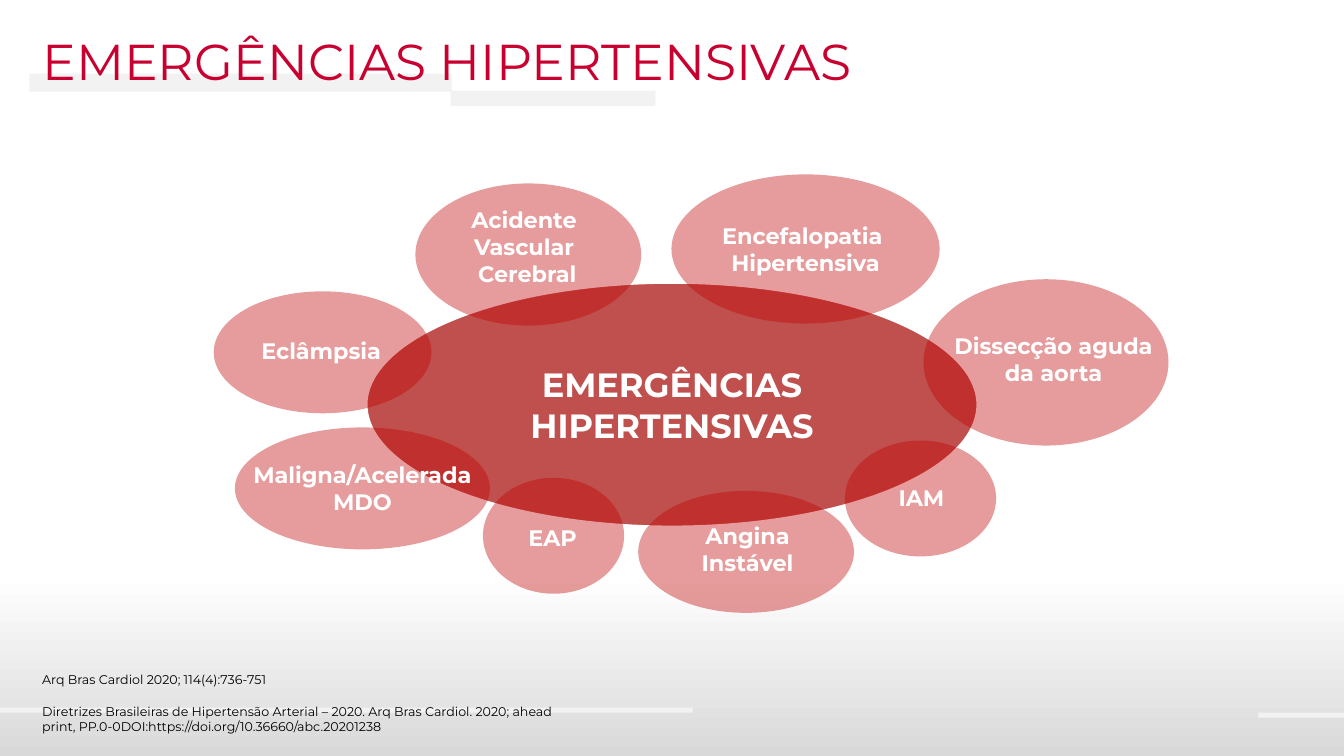
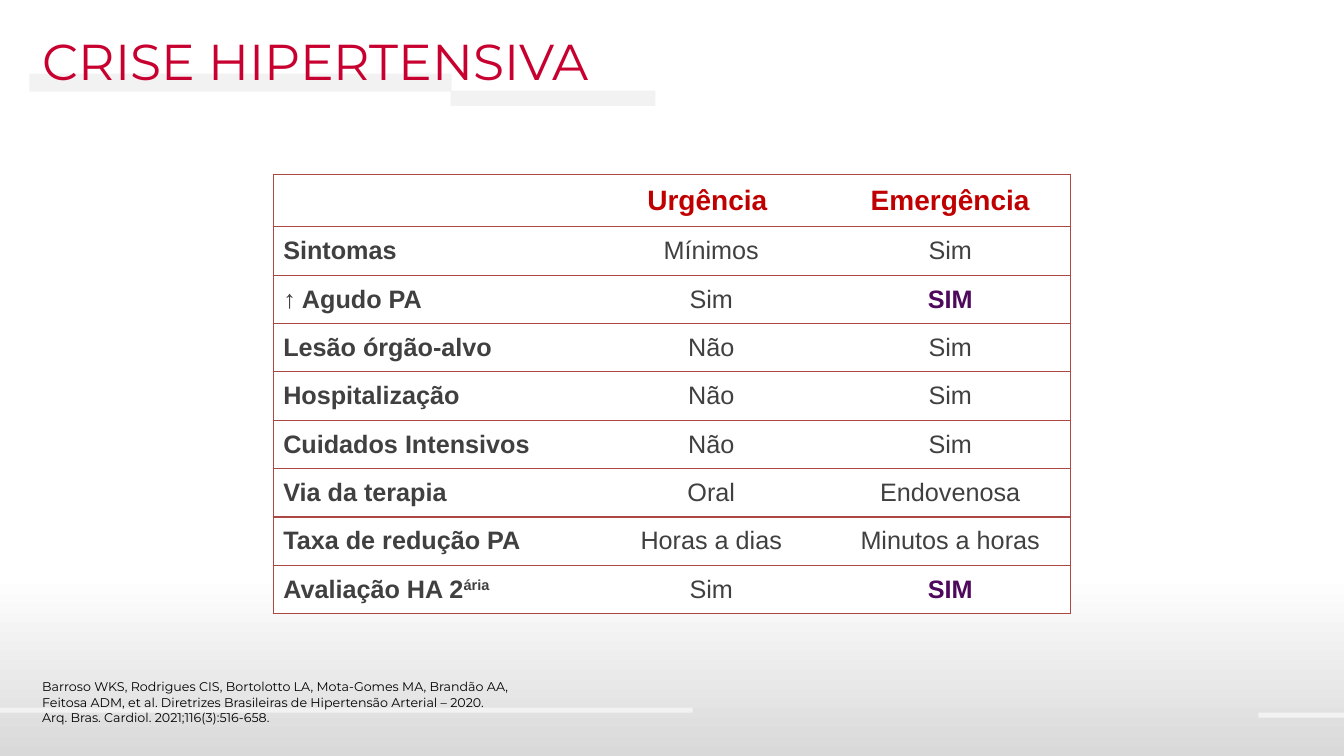
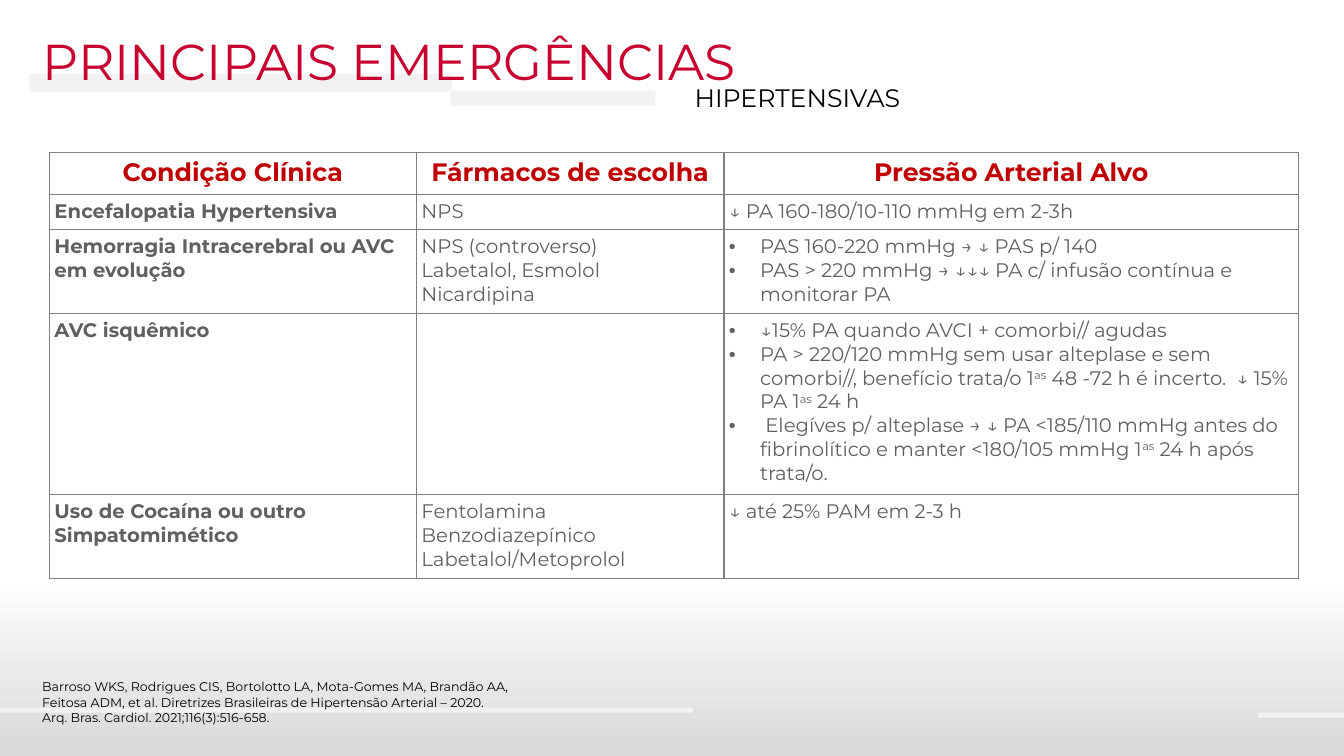
"""Build three slides on hypertensive emergencies."""
import lxml.etree
import pptx
import pptx.dml.color
import pptx.enum.shapes
import pptx.enum.text
import pptx.oxml.ns
import pptx.util

RGB = pptx.dml.color.RGBColor
WHITE = RGB(0xFF, 0xFF, 0xFF)
BLACK = RGB(0, 0, 0)
PALE = RGB(0xF2, 0xF2, 0xF2)
SHADE = RGB(0xD9, 0xD9, 0xD9)
TITLE = RGB(0xC8, 0x00, 0x30)
CORE = RGB(0xC0, 0x50, 0x4D)
RED = RGB(0xC0, 0, 0)
BRICK = RGB(0xAC, 0x47, 0x44)
DARK = RGB(0x40, 0x40, 0x40)
PLUM = RGB(0x4E, 0x08, 0x5C)
GRAY = RGB(0x80, 0x80, 0x80)
TEXT = RGB(0x60, 0x60, 0x60)

ALIGN = pptx.enum.text.PP_ALIGN
ANCHOR = pptx.enum.text.MSO_ANCHOR
SHAPE = pptx.enum.shapes.MSO_SHAPE
Inches = pptx.util.Inches
qn = pptx.oxml.ns.qn

WIDE, HIGH = 13.33, 7.5
BANDS = [
    (0.29, 0.73, 4.19, 0.18),
    (4.47, 0.9, 2.03, 0.15),
    (-0.02, 7.02, 6.89, 0.05),
    (12.48, 7.07, 0.85, 0.05),
]

HUB = (["EMERGÊNCIAS", "HIPERTENSIVAS"], (3.63, 2.8, 6.07, 2.43))
CAUSES = [
    (["Eclâmpsia"], (2.12, 2.89, 2.16, 1.21), (2.49, 3.3, 1.39, 0.37)),
    (["Angina Instável"], (6.33, 4.87, 2.14, 1.21), (6.45, 5.13, 1.93, 0.64)),
    (["Dissecção aguda da aorta"], (9.16, 2.77, 2.43, 1.65), (9.32, 3.25, 2.26, 0.64)),
    (["Acidente ", "Vascular ", "Cerebral"], (4.12, 1.82, 2.24, 1.41), (3.81, 2, 2.84, 0.91)),
    (["EAP"], (4.79, 4.74, 1.4, 1.15), (5.14, 5.15, 0.68, 0.37)),
    (["IAM"], (8.38, 4.37, 1.5, 1.15), (8.81, 4.75, 0.66, 0.37)),
    (["Encefalopatia ", "Hipertensiva"], (6.66, 1.73, 2.66, 1.48), None),
    (["Maligna/Acelerada", "MDO"], (2.33, 4.24, 2.53, 1.21), None),
]

CRISIS = [
    ("", "Urgência ", "Emergência"),
    ("Sintomas", "Mínimos", "Sim"),
    ("↑ Agudo PA", "Sim", "SIM"),
    ("Lesão órgão-alvo", "Não", "Sim"),
    ("Hospitalização", "Não", "Sim"),
    ("Cuidados Intensivos", "Não", "Sim"),
    ("Via da terapia", "Oral", "Endovenosa"),
    ("Taxa de redução PA", "Horas a dias", "Minutos a horas"),
    ("Avaliação HA 2^ária^", "Sim", "SIM"),
]

DRUGS = [
    ("Condição Clínica", "Fármacos de escolha", "Pressão Arterial Alvo"),
    ("Encefalopatia Hypertensiva", "NPS", "↓ PA 160-180/10-110 mmHg em 2-3h"),
    (
        "Hemorragia Intracerebral ou AVC em evolução",
        ["NPS (controverso)", "Labetalol, Esmolol", "Nicardipina"],
        [
            "•PAS 160-220 mmHg → ↓ PAS p/ 140",
            "•PAS > 220 mmHg → ↓↓↓ PA c/ infusão contínua e monitorar PA",
        ],
    ),
    (
        "AVC isquêmico",
        "",
        [
            "•↓15% PA quando AVCI + comorbi// agudas",
            "•PA > 220/120 mmHg sem usar alteplase e sem comorbi//, benefício "
            "trata/o 1^as^ 48 -72 h é incerto.  ↓ 15% PA 1^as^ 24 h",
            "• Elegíves p/ alteplase → ↓ PA <185/110 mmHg antes do fibrinolítico "
            "e manter <180/105 mmHg 1^as^ 24 h após trata/o.",
        ],
    ),
    (
        "Uso de Cocaína ou outro Simpatomimético",
        ["Fentolamina", "Benzodiazepínico", "Labetalol/Metoprolol"],
        "↓ até 25% PAM em 2-3 h",
    ),
]

JOURNAL = ["Arq Bras Cardiol 2020; 114(4):736-751"]
GUIDE = [
    "Diretrizes Brasileiras de Hipertensão Arterial – 2020. Arq Bras Cardiol. 2020; "
    "ahead print, PP.0-0DOI:https://doi.org/10.36660/abc.20201238"
]
SOURCE = [
    "Barroso WKS, Rodrigues CIS, Bortolotto LA, Mota-Gomes MA, Brandão AA,",
    "Feitosa ADM, et al. Diretrizes Brasileiras de Hipertensão Arterial – 2020.",
    "Arq. Bras. Cardiol. 2021;116(3):516-658.",
]


def write(frame, lines, size=9, color=BLACK, bold=False, align=ALIGN.LEFT,
          font="Montserrat", space=None):
    """Fill a text frame; ^marks^ raise text and a leading • makes a bullet."""
    for row, line in enumerate([lines] if isinstance(lines, str) else lines):
        para = frame.add_paragraph() if row else frame.paragraphs[0]
        para.alignment = align
        if space:
            para.line_spacing = space
        if line.startswith("•"):
            line = line[1:]
            props = para._p.get_or_add_pPr()
            props.set("marL", str(Inches(0.31)))
            props.set("indent", str(Inches(-0.31)))
            lxml.etree.SubElement(props, qn("a:buFont"), typeface="Arial")
            lxml.etree.SubElement(props, qn("a:buChar"), char="•")
        for part, words in enumerate(line.split("^")):
            if not words:
                continue
            run = para.add_run()
            run.text = words
            run.font.size = pptx.util.Pt(size)
            run.font.name = font
            run.font.bold = bold
            run.font.color.rgb = color
            if part % 2:
                run._r.get_or_add_rPr().set("baseline", "30000")


def label(slide, lines, at, **style):
    """Add a wrapping text box."""
    box = slide.shapes.add_textbox(*map(Inches, at))
    box.text_frame.word_wrap = True
    write(box.text_frame, lines, **style)


def draw(slide, kind, at, color, alpha=None):
    """Add a flat filled shape with no outline."""
    shape = slide.shapes.add_shape(kind, *map(Inches, at))
    shape.shadow.inherit = False
    shape.fill.solid()
    shape.fill.fore_color.rgb = color
    shape.line.fill.background()
    if alpha:
        tint = shape.element.spPr.find(".//" + qn("a:srgbClr"))
        lxml.etree.SubElement(tint, qn("a:alpha"), val=str(alpha * 1000))
    return shape


def dress(slide, layout):
    """Draw the shared backdrop and move it to the layout."""
    back = draw(slide, SHAPE.RECTANGLE, (0, 0, WIDE, HIGH), WHITE)
    back.fill.gradient()
    back.fill.gradient_angle = 270
    for stop, place, color in zip(back.fill.gradient_stops, (0.76, 1), (WHITE, SHADE)):
        stop.position = place
        stop.color.rgb = color
    bands = [draw(slide, SHAPE.RECTANGLE, at, PALE) for at in BANDS]
    for shape in [back] + bands:
        layout.shapes.element.append(shape.element)


def page(deck, layout, title):
    """Add a slide with its title."""
    slide = deck.slides.add_slide(layout)
    head = slide.shapes.title
    head.left, head.top, head.width, head.height = map(Inches, (0.32, 0.25, 10.4, 0.71))
    frame = head.text_frame
    frame.auto_size = pptx.enum.text.MSO_AUTO_SIZE.NONE
    frame.vertical_anchor = ANCHOR.TOP
    write(frame, title, size=36, color=TITLE)
    return slide


def grid(slide, rows, at, cols, highs, edge, style, sides, fill=None, pad=None,
         anchor=ANCHOR.TOP):
    """Add a table whose style and borders follow from row and column."""
    shape = slide.shapes.add_table(len(rows), len(cols), *map(Inches, at),
                                   Inches(sum(cols)), Inches(sum(highs)))
    table = shape.table
    table.first_row = table.horz_banding = False
    for col, wide in zip(table.columns, cols):
        col.width = Inches(wide)
    for row, high in zip(table.rows, highs):
        row.height = Inches(high)
    for r, line in enumerate(rows):
        for c, words in enumerate(line):
            cell = table.cell(r, c)
            cell.vertical_anchor = anchor
            if pad:
                cell.margin_left = cell.margin_right = Inches(pad)
                cell.margin_top = cell.margin_bottom = Inches(pad)
            if fill:
                cell.fill.solid()
                cell.fill.fore_color.rgb = fill
            else:
                cell.fill.background()
            props = cell._tc.get_or_add_tcPr()
            for spot, side in enumerate("LRTB"):
                ln = lxml.etree.Element(qn("a:ln" + side), w="12700")
                if side in sides(c):
                    ink = lxml.etree.SubElement(ln, qn("a:solidFill"))
                    lxml.etree.SubElement(ink, qn("a:srgbClr"), val=str(edge))
                else:
                    lxml.etree.SubElement(ln, qn("a:noFill"))
                props.insert(spot, ln)
            write(cell.text_frame, words, **style(r, c, words))


def crisis(row, col, words):
    """Give the format of a cell in the crisis table."""
    color = RED if row == 0 else PLUM if words == "SIM" else DARK
    return dict(size=18 if row else 20, color=color, font="Arial",
                bold=row == 0 or col == 0 or words == "SIM",
                align=ALIGN.CENTER if col else ALIGN.LEFT)


def drugs(row, col, words):
    """Give the format of a cell in the drug table."""
    if row == 0:
        return dict(size=18, color=RED, bold=True, align=ALIGN.CENTER)
    return dict(size=14, color=TEXT, bold=col == 0)


def main():
    """Build and save the deck."""
    deck = pptx.Presentation()
    deck.slide_width, deck.slide_height = Inches(WIDE), Inches(HIGH)
    layout = deck.slide_layouts[5]

    slide = page(deck, layout, "EMERGÊNCIAS HIPERTENSIVAS")
    dress(slide, layout)
    lines, at = HUB
    hub = draw(slide, SHAPE.OVAL, at, CORE)
    hub.line.color.rgb = WHITE
    hub.line.width = pptx.util.Pt(2.25)
    write(hub.text_frame, lines, size=24, color=WHITE, bold=True, align=ALIGN.CENTER)
    style = dict(size=16, color=WHITE, bold=True, align=ALIGN.CENTER)
    for lines, at, spot in CAUSES:
        oval = draw(slide, SHAPE.OVAL, at, RED, alpha=39)
        if spot:
            label(slide, lines, spot, **style)
        else:
            oval.text_frame.word_wrap = False
            write(oval.text_frame, lines, **style)
    label(slide, JOURNAL, (0.32, 6.65, 5.05, 0.22), space=0.8)
    label(slide, GUIDE, (0.32, 6.93, 5.28, 0.4))

    slide = page(deck, layout, "CRISE HIPERTENSIVA")
    grid(slide, CRISIS, (2.71, 1.73), (3.17, 2.35, 2.39), [0.52] + [0.48] * 8, BRICK,
         crisis, lambda col: ("LTB", "TB", "RTB")[col], fill=WHITE, anchor=ANCHOR.MIDDLE)
    foot = (0.32, 6.69, 6.69, 0.56)
    label(slide, SOURCE, foot)

    slide = page(deck, layout, "PRINCIPAIS EMERGÊNCIAS")
    label(slide, "HIPERTENSIVAS", (6.79, 0.77, 4.96, 0.4), size=18)
    grid(slide, DRUGS, (0.49, 1.51), (3.64, 3.05, 5.7), (0.42, 0.35, 0.83, 1.8, 0.83),
         GRAY, drugs, lambda col: "LRTB", pad=0.05)
    label(slide, SOURCE, foot)

    deck.save("out.pptx")


if __name__ == "__main__":
    main()
